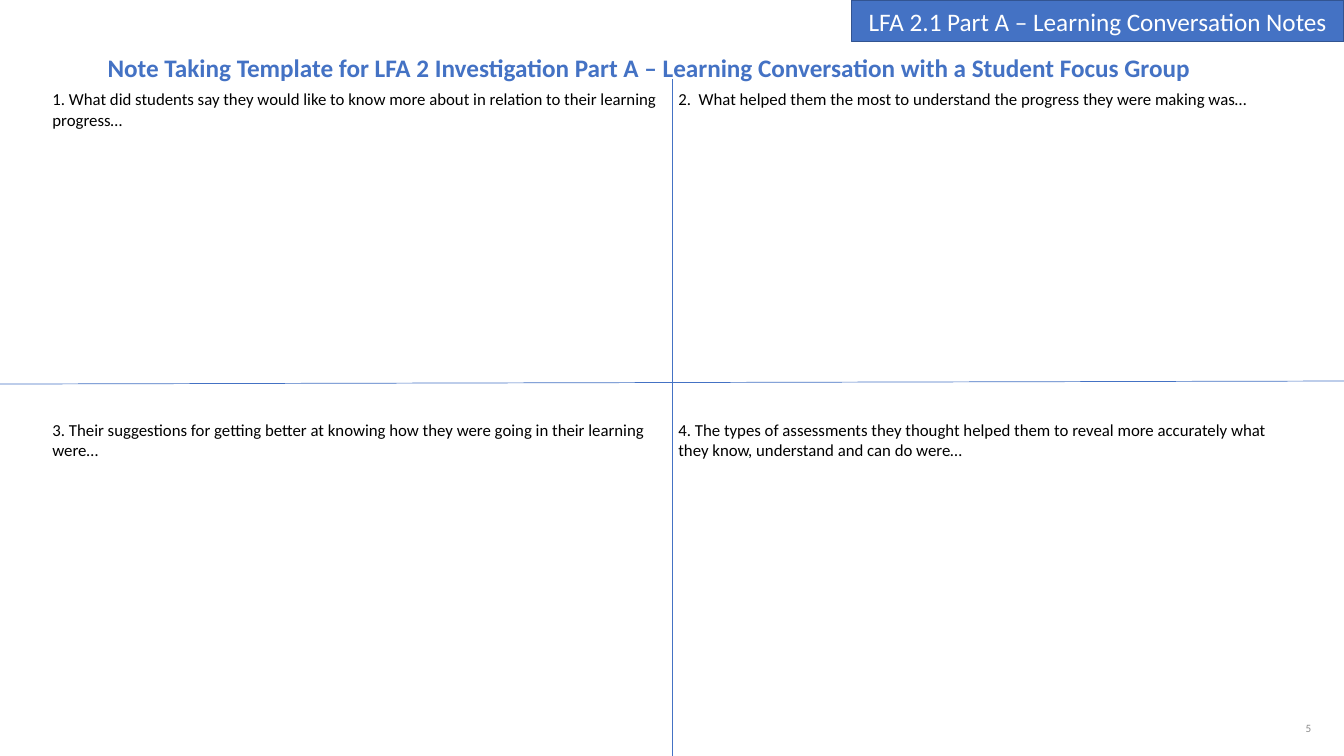
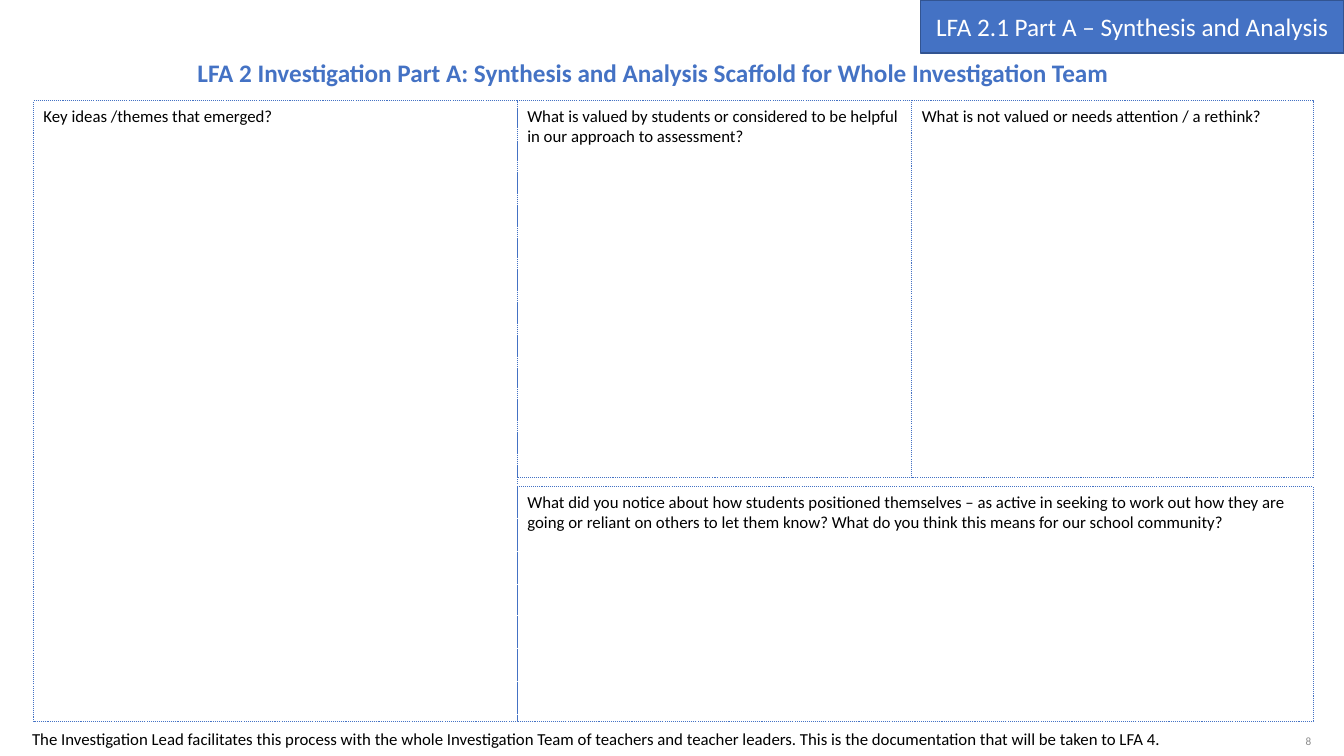
from lxml import etree
from pptx import Presentation
from pptx import util as u
from pptx.dml.color import RGBColor
from pptx.enum import dml, shapes, text
from pptx.oxml.ns import qn

# Shared style
BLUE = RGBColor(0x44, 0x72, 0xC4)
DARK_BLUE = RGBColor(0x32, 0x54, 0x91)
GREY = RGBColor(0x8C, 0x8C, 0x8C)
BLACK = RGBColor(0, 0, 0)
WHITE = RGBColor(255, 255, 255)
FONT = "Calibri"
LEFT, CENTER, RIGHT = text.PP_ALIGN.LEFT, text.PP_ALIGN.CENTER, text.PP_ALIGN.RIGHT
TOP, MIDDLE = text.MSO_ANCHOR.TOP, text.MSO_ANCHOR.MIDDLE
TITLE_ONLY = 5
FORMATS = {
    "title": dict(size=u.Pt(18), bold=True, color=BLUE, align=CENTER, anchor=TOP),
    "tag": dict(size=u.Pt(18), bold=False, color=WHITE, align=CENTER, anchor=MIDDLE),
    "body": dict(size=u.Pt(12), bold=False, color=BLACK, align=LEFT, anchor=TOP),
    "number": dict(size=u.Pt(8), bold=False, color=GREY, align=RIGHT, anchor=MIDDLE),
}


class Deck:
    """Holds the style and current slide; lengths are percent of the slide's size."""

    def __init__(self):
        self.presentation = Presentation()
        self.presentation.slide_width = u.Inches(13.333)
        self.presentation.slide_height = u.Inches(7.5)
        self.slide = None

    def x(self, share):
        return round(self.presentation.slide_width * share / 100)

    def y(self, share):
        return round(self.presentation.slide_height * share / 100)

    def area(self, left, top, width, height):
        return self.x(left), self.y(top), self.x(width), self.y(height)

    def set_text(self, frame, words, style):
        values = FORMATS[style]
        frame.text = words
        frame.word_wrap = True
        frame.vertical_anchor = values["anchor"]
        paragraph = frame.paragraphs[0]
        paragraph.alignment = values["align"]
        font = paragraph.runs[0].font
        font.name = FONT
        for name in ("size", "bold"):
            setattr(font, name, values[name])
        font.color.rgb = values["color"]

    def new_slide(self, title, left, top, width):
        layout = self.presentation.slide_layouts[TITLE_ONLY]
        self.slide = self.presentation.slides.add_slide(layout)
        shape = self.slide.shapes.title
        places = zip(("left", "top", "width", "height"), self.area(left, top, width, 5.3))
        for name, value in places:
            setattr(shape, name, value)
        self.set_text(shape.text_frame, title, "title")
        shape.text_frame.auto_size = text.MSO_AUTO_SIZE.NONE

    def text_box(self, words, place, style="body"):
        shape = self.slide.shapes.add_textbox(*self.area(*place))
        self.set_text(shape.text_frame, words, style)

    def number(self, words, top):
        self.text_box(words, (75.8, top, 22.5, 5.3), "number")

    def rectangle(self, words, place, style):
        shape = self.slide.shapes.add_shape(
            shapes.MSO_SHAPE.RECTANGLE, *self.area(*place))
        shape.shadow.inherit = False
        self.set_text(shape.text_frame, words, style)
        return shape

    def tag(self, words, width, height):
        """Label in the top right corner."""
        shape = self.rectangle(words, (100 - width, 0.1, width, height), "tag")
        shape.fill.solid()
        shape.fill.fore_color.rgb = BLUE
        shape.line.color.rgb = DARK_BLUE
        shape.line.width = u.Pt(1)

    def dotted_box(self, words, left, top, right, bottom):
        place = (left, top, right - left, bottom - top)
        shape = self.rectangle(words, place, "body")
        shape.fill.background()
        shape.line.color.rgb = BLUE
        shape.line.width = u.Pt(0.75)
        shape.line.dash_style = dml.MSO_LINE.ROUND_DOT

    def line(self, start_x, start_y, end_x, end_y):
        connector = self.slide.shapes.add_connector(
            shapes.MSO_CONNECTOR.STRAIGHT,
            self.x(start_x), self.y(start_y), self.x(end_x), self.y(end_y))
        connector.line.color.rgb = BLUE
        connector.line.width = u.Pt(0.5)
        etree.SubElement(connector._element.spPr, qn("a:effectLst"))

    def table(self, rows, place):
        frame = self.slide.shapes.add_table(len(rows), len(rows[0]), *self.area(*place))
        table = frame.table
        table.first_row = table.horz_banding = False
        for cell, words in zip(table.iter_cells(), sum(rows, [])):
            cell.fill.background()
            self.set_text(cell.text_frame, words, "body")
            cell.vertical_anchor = TOP


def conversation_notes(deck):
    deck.new_slide("Note Taking Template for LFA 2 Investigation Part A – Learning "
                   "Conversation with a Student Focus Group", -1.7, 6.3, 100)
    deck.number("5", 93.7)
    # Four questions, divided by a cross
    deck.table([
        ["1. What did students say they would like to know more about in relation to "
         "their learning progress…",
         "2.  What helped them the most to understand the progress they were making was…"],
        ["3. Their suggestions for getting better at knowing how they were going in "
         "their learning were…",
         "4. The types of assessments they thought helped them to reveal more accurately "
         "what they know, understand and can do were…"],
    ], (3.15, 11.2, 93.15, 87.5))
    deck.line(50, 10.5, 50, 100)
    deck.line(0, 50.8, 100, 50.4)
    deck.tag("LFA 2.1 Part A – Learning Conversation Notes", 36.65, 5.4)


def synthesis(deck):
    deck.new_slide("LFA 2 Investigation Part A: Synthesis and Analysis Scaffold for "
                   "Whole Investigation Team", -0.5, 6.95, 98.2)
    deck.number("8", 95.35)
    # Scaffold boxes share these column and row edges
    left, second, third, right = 2.5, 38.5, 67.85, 97.7
    top, upper_end, lower_start, bottom = 13.3, 63.2, 64.4, 95.4
    deck.dotted_box("Key ideas /themes that emerged?", left, top, second, bottom)
    deck.dotted_box("What is valued by students or considered to be helpful in our "
                    "approach to assessment?", second, top, third, upper_end)
    deck.dotted_box("What is not valued or needs attention / a rethink?",
                    third, top, right, upper_end)
    deck.dotted_box("What did you notice about how students positioned themselves – as "
                    "active in seeking to work out how they are going or reliant on "
                    "others to let them know? What do you think this means for our "
                    "school community?", second, lower_start, right, bottom)
    # Closing note
    deck.text_box("The Investigation Lead facilitates this process with the whole "
                  "Investigation Team of teachers and teacher leaders. This is the "
                  "documentation that will be taken to LFA 4.", (1.65, 95.75, 91.95, 4))
    deck.tag("LFA 2.1 Part A – Synthesis and Analysis", 31.5, 6.9)


def main():
    deck = Deck()
    conversation_notes(deck)
    synthesis(deck)
    deck.presentation.save("out.pptx")


if __name__ == "__main__":
    main()
